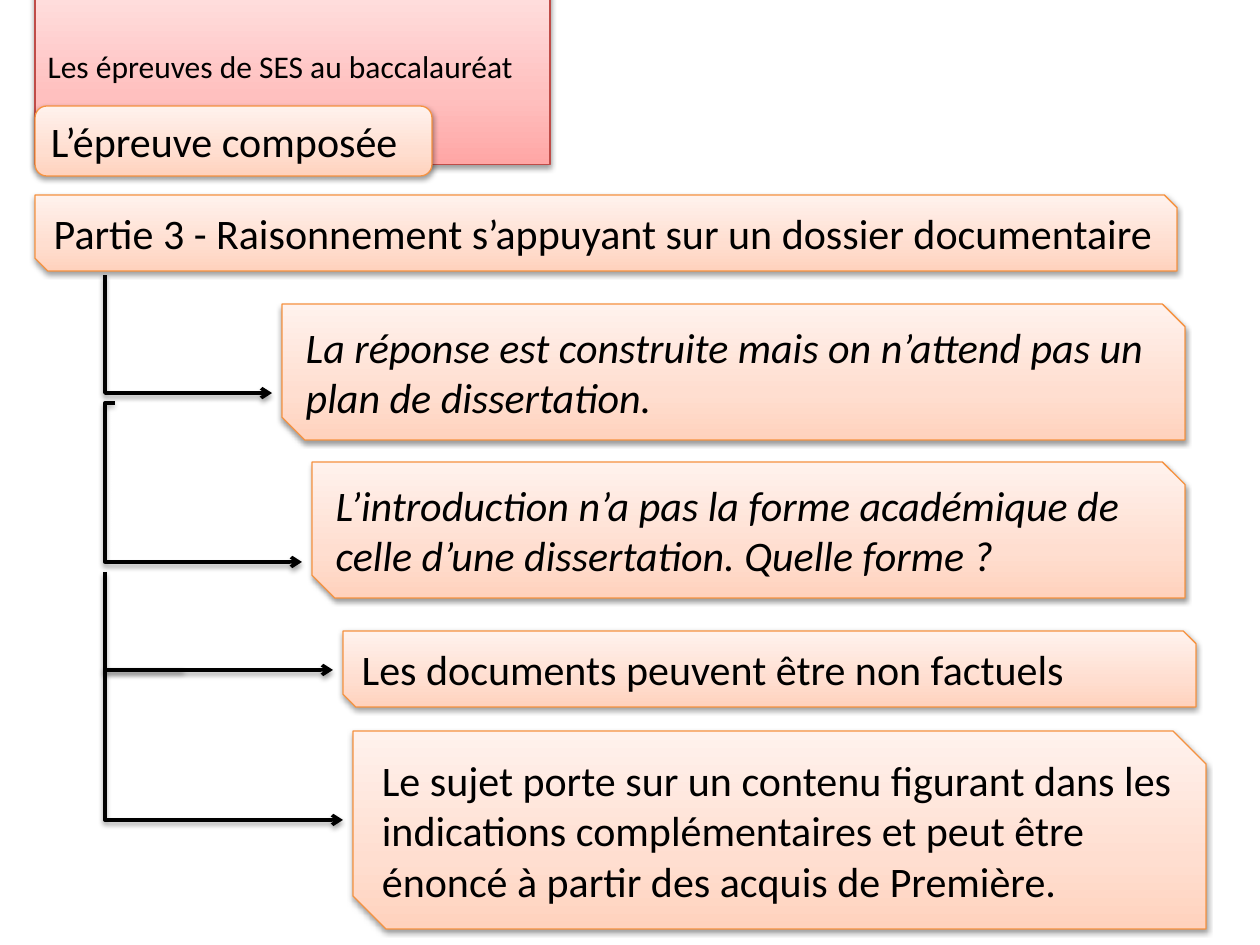
from copy import deepcopy

from lxml import etree
from pptx import Presentation
from pptx import util as u
from pptx.dml.color import RGBColor
from pptx.enum import shapes, text
from pptx.oxml import parse_xml
from pptx.oxml.ns import nsdecls, qn

PX = 914400 / 126
BLACK = RGBColor(0x00, 0x00, 0x00)
RED_LINE = RGBColor(0xBF, 0x4C, 0x48)
RED_STOPS = (RGBColor(0xFF, 0xA6, 0xA5), RGBColor(0xFF, 0xC0, 0xBF), RGBColor(0xFF, 0xE7, 0xE7))
ORANGE_LINE = RGBColor(0xF6, 0x92, 0x40)
ORANGE_STOPS = (RGBColor(0xFF, 0xD2, 0xBD), RGBColor(0xFF, 0xDE, 0xD0), RGBColor(0xFF, 0xF2, 0xED))
STOP_POSITIONS = (0, 0.35, 1)

STEM_X = 105
ARROW_GAP = 10
ROUNDED = shapes.MSO_SHAPE.ROUNDED_RECTANGLE
SNIPPED = shapes.MSO_SHAPE.SNIP_2_DIAG_RECTANGLE

TITLE = ("Les épreuves de SES au baccalauréat", (35, 37, 515, 57))
HEADINGS = (
    ("L’épreuve composée", (35, 106, 397, 70), ROUNDED),
    ("Partie 3 - Raisonnement s’appuyant sur un dossier documentaire", (35, 195, 1142, 76), SNIPPED),
)
POINTS = (
    ("La réponse est construite mais on n’attend pas un plan de dissertation.",
     (282, 304, 903, 136), True, (105, 275), 393),
    ("L’introduction n’a pas la forme académique de celle d’une dissertation. Quelle forme ?",
     (312, 462, 873, 136), True, (115, 403), 562),
    ("Les documents peuvent être non factuels",
     (343, 631, 853, 76), False, (105, 572), 670),
    ("Le sujet porte sur un contenu figurant dans les indications complémentaires "
     "et peut être énoncé à partir des acquis de Première.",
     (353, 731, 853, 198), False, (184, 670), 820),
)


def px(*lengths):
    """Turn pixel lengths into EMU."""
    return [u.Emu(round(length * PX)) for length in lengths]


def assign(target, **values):
    """Set several attributes on one object."""
    for name, value in values.items():
        setattr(target, name, value)


def add_shadow(properties):
    """Give shape properties a soft shadow that falls straight down."""
    effects = properties.find(qn("a:effectLst"))
    if effects is None:
        effects = etree.SubElement(properties, qn("a:effectLst"))
    effects.append(parse_xml(
        f'<a:outerShdw {nsdecls("a")} blurRad="40000" dist="20000" dir="5400000" rotWithShape="0">'
        '<a:srgbClr val="000000"><a:alpha val="38000"/></a:srgbClr></a:outerShdw>'))


def format_panel(panel, wording, stops, outline, size=24, italic=False):
    """Apply the gradient, outline, shadow and wording of a panel."""
    panel.fill.gradient()
    stop_list = panel._element.spPr.find(qn("a:gradFill")).find(qn("a:gsLst"))
    stop_list.append(deepcopy(stop_list[-1]))
    for stop, colour, position in zip(panel.fill.gradient_stops, stops, STOP_POSITIONS):
        stop.color.rgb = colour
        stop.position = position
    panel.fill.gradient_angle = 90
    panel.line.color.rgb = outline
    panel.line.width = u.Pt(0.75)
    panel.shadow.inherit = False
    add_shadow(panel._element.spPr)
    frame = panel.text_frame
    frame.text = wording
    assign(frame, word_wrap=True, vertical_anchor=text.MSO_ANCHOR.MIDDLE,
           auto_size=text.MSO_AUTO_SIZE.SHAPE_TO_FIT_TEXT)
    paragraph = frame.paragraphs[0]
    paragraph.alignment = text.PP_ALIGN.LEFT
    font = paragraph.runs[0].font
    assign(font, name="Calibri", size=u.Pt(size), italic=italic)
    font.color.rgb = BLACK


def place_title(slide, wording, box):
    """Move the title placeholder to its box and round its corners."""
    title = slide.shapes.title
    assign(title, **dict(zip(("left", "top", "width", "height"), px(*box))))
    title._element.spPr.append(parse_xml(
        f'<a:prstGeom {nsdecls("a")} prst="roundRect"><a:avLst/></a:prstGeom>'))
    format_panel(title, wording, RED_STOPS, RED_LINE, size=18)


def add_panel(slide, wording, box, outline_kind, italic=False):
    """Add an orange panel in its box."""
    panel = slide.shapes.add_shape(outline_kind, *px(*box))
    format_panel(panel, wording, ORANGE_STOPS, ORANGE_LINE, italic=italic)


def add_branch(slide, start, end):
    """Add an elbow arrow that runs down the common stem."""
    branch = slide.shapes.add_connector(shapes.MSO_CONNECTOR.ELBOW, *px(*start, *end))
    branch.line.color.rgb = BLACK
    branch.line.width = u.Pt(2)
    properties = branch._element.spPr
    bend = round((STEM_X - start[0]) / (end[0] - start[0]) * 100000)
    guides = properties.find(qn("a:prstGeom")).find(qn("a:avLst"))
    etree.SubElement(guides, qn("a:gd"), name="adj1", fmla=f"val {bend}")
    etree.SubElement(properties.find(qn("a:ln")), qn("a:tailEnd"), type="arrow")
    add_shadow(properties)


def add_point(slide, wording, box, italic, start, arrow_y):
    """Add a point with the branch that leads to it."""
    add_branch(slide, start, (box[0] - ARROW_GAP, arrow_y))
    add_panel(slide, wording, box, SNIPPED, italic)


def main():
    """Build the slide and save it."""
    deck = Presentation()
    assign(deck, slide_width=u.Inches(10), slide_height=u.Inches(7.5))
    slide = deck.slides.add_slide(deck.slide_layouts[5])
    place_title(slide, *TITLE)
    for heading in HEADINGS:
        add_panel(slide, *heading)
    for point in POINTS:
        add_point(slide, *point)
    deck.save("out.pptx")


if __name__ == "__main__":
    main()
